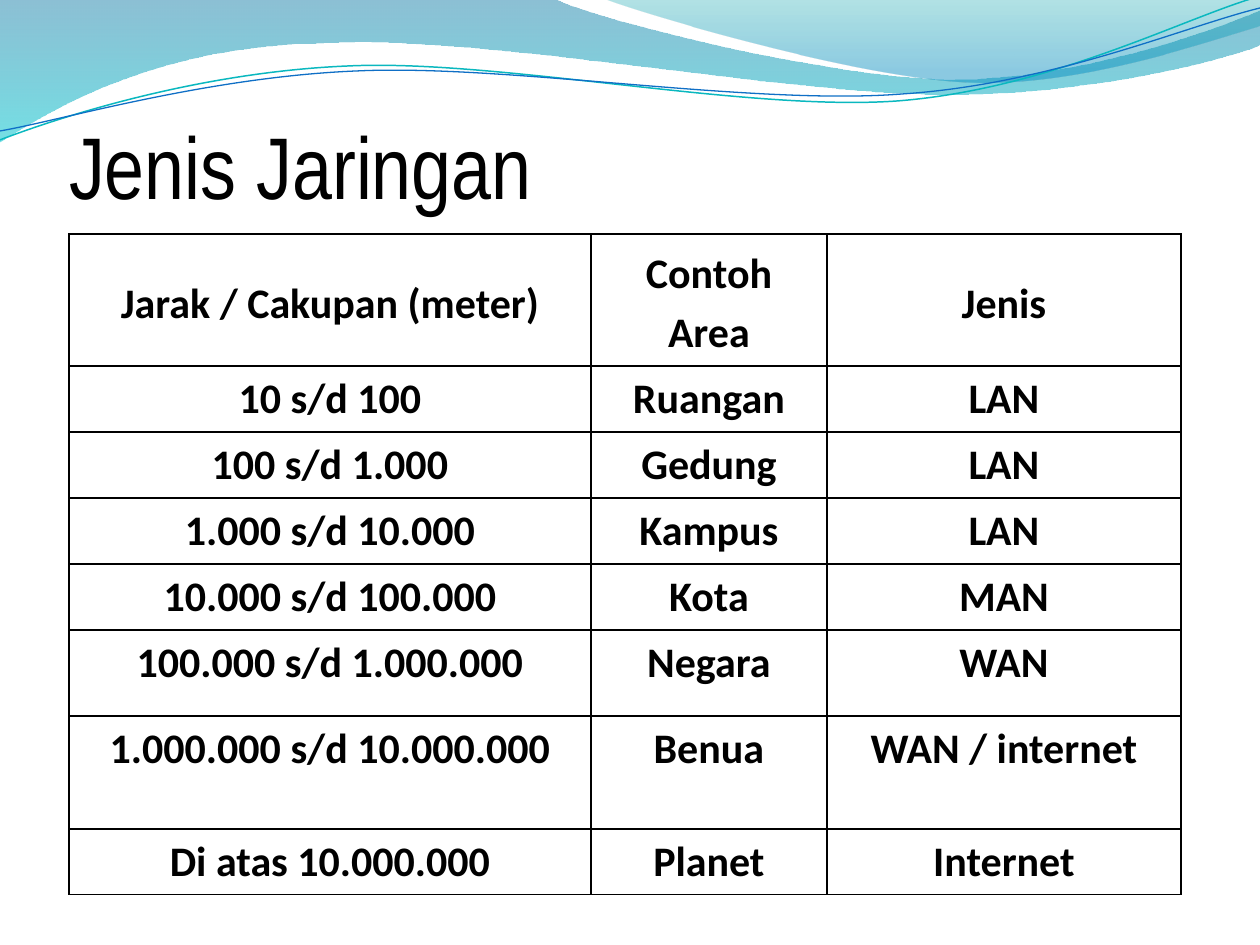
import math
from dataclasses import dataclass

import pptx
import pptx.dml.color
import pptx.enum.text
import pptx.oxml
import pptx.oxml.ns
import pptx.util

SCALE = 914400 / 126
MSO_ANCHOR = pptx.enum.text.MSO_ANCHOR
PP_ALIGN = pptx.enum.text.PP_ALIGN
qn = pptx.oxml.ns.qn
NS = pptx.oxml.ns.nsdecls("a")


@dataclass
class Stop:
    position: float
    color: str
    opacity: int


@dataclass
class Band:
    segments: list[tuple[int, ...]]
    stops: tuple[Stop, Stop]


@dataclass
class Strand:
    segments: list[tuple[int, ...]]
    color: str
    width: float
    pivot: tuple[int, int]


BANDS = [
    Band(
        [(0, 0), (554, -1), (600, 21, 837, 79, 955, 79), (1075, 79, 1207, 33, 1260, 11),
         (1261, 45), (1239, 55, 1096, 96, 940, 94), (784, 94, 481, 35, 324, 43),
         (163, 45, 58, 105, -1, 142), (0, 0)],
        (Stop(0, "0074A1", 45), Stop(1, "00C6CF", 55)),
    ),
    Band(
        [(604, -1), (641, 14, 859, 78, 969, 82), (1079, 87, 1211, 40, 1260, 26), (1260, 0),
         (604, -1)],
        (Stop(0, "00A1A9", 30), Stop(0.8, "008BBF", 45)),
    ),
]
STRANDS = [
    Strand(
        [(0, 140), (60, 117, 199, 72, 349, 66), (498, 59, 747, 112, 898, 101),
         (1050, 89, 1182, 19, 1257, -3)],
        "0AB8BF", 0.85, (629, 72),
    ),
    Strand(
        [(0, 131), (59, 121, 207, 77, 357, 71), (508, 64, 752, 106, 903, 94),
         (1053, 84, 1186, 26, 1260, 8)],
        "0F6FC6", 0.75, (630, 74),
    ),
]
STRAND_ANGLE = -2.7

COLUMNS = [522, 236, 354]
ROW_HEIGHTS = [132, 66, 66, 66, 66, 86, 113, 66]
ROWS = [
    ("Jarak / Cakupan (meter)", "Contoh Area", "Jenis"),
    ("10 s/d 100", "Ruangan", "LAN"),
    ("100 s/d 1.000", "Gedung", "LAN"),
    ("1.000 s/d 10.000", "Kampus", "LAN"),
    ("10.000 s/d 100.000", "Kota", "MAN"),
    ("100.000 s/d 1.000.000", "Negara", "WAN"),
    ("1.000.000 s/d 10.000.000", "Benua", "WAN / internet"),
    ("Di atas 10.000.000", "Planet", "Internet"),
]


def px(n: float) -> pptx.util.Emu:
    return pptx.util.Emu(round(n * SCALE))


def rgb(color: str) -> pptx.dml.color.RGBColor:
    return pptx.dml.color.RGBColor.from_string(color)


def turn(segment: tuple[int, ...], pivot: tuple[int, int], degrees: float) -> tuple[float, ...]:
    cos, sin = math.cos(math.radians(degrees)), math.sin(math.radians(degrees))
    cx, cy = pivot
    turned = []
    for x, y in zip(segment[::2], segment[1::2]):
        turned += [cx + (x - cx) * cos - (y - cy) * sin, cy + (x - cx) * sin + (y - cy) * cos]
    return tuple(turned)


def add_outline(s, segments: list[tuple[float, ...]], close: bool):
    first, *rest = [(px(x), px(y)) for seg in segments for x, y in zip(seg[::2], seg[1::2])]
    builder = s.shapes.build_freeform(*first)
    builder.add_line_segments(rest, close=close)
    sp = builder.convert_to_shape()
    sp.shadow.inherit = False
    steps = iter(list(sp._element.spPr.iter(qn("a:lnTo"))))
    for segment in segments[1:]:
        step = next(steps)
        if len(segment) == 6:
            curve = pptx.oxml.parse_xml(f"<a:cubicBezTo {NS}/>")
            step.addprevious(curve)
            for part in (step, next(steps), next(steps)):
                curve.append(part[0])
                part.getparent().remove(part)
    return sp


def add_band(s, band: Band) -> None:
    sp = add_outline(s, band.segments, True)
    sp.line.fill.background()
    sp.fill.gradient()
    sp.fill.gradient_angle = 270
    for target, stop in zip(sp.fill.gradient_stops, band.stops):
        target.position = stop.position
        target.color.rgb = rgb(stop.color)
    colors = list(sp._element.spPr.iter(qn("a:srgbClr")))
    for color, stop in zip(colors, band.stops):
        color.append(pptx.oxml.parse_xml(f'<a:alpha {NS} val="{stop.opacity * 1000}"/>'))


def add_strand(s, strand: Strand) -> None:
    level = [turn(segment, strand.pivot, -STRAND_ANGLE) for segment in strand.segments]
    sp = add_outline(s, level, False)
    sp.rotation = STRAND_ANGLE
    sp.fill.background()
    sp.line.color.rgb = rgb(strand.color)
    sp.line.width = pptx.util.Pt(strand.width)


def add_text(p, text: str, font: str, size: int, bold: bool) -> None:
    r = p.add_run()
    r.text = text
    r.font.name = font
    r.font.size = pptx.util.Pt(size)
    r.font.bold = bold
    r.font.color.rgb = rgb("000000")


def set_title(s, text: str) -> None:
    sp = s.shapes.title
    sp.left, sp.top, sp.width, sp.height = px(69), px(59), px(1134), px(158)
    tf = sp.text_frame
    tf.word_wrap = True
    tf.auto_size = pptx.enum.text.MSO_AUTO_SIZE.NONE
    tf.vertical_anchor = MSO_ANCHOR.BOTTOM
    tf.margin_left = tf.margin_right = tf.margin_bottom = 0
    tf.margin_top = px(6)
    p = tf.paragraphs[0]
    p.alignment = PP_ALIGN.LEFT
    add_text(p, text, "Arial Narrow", 50, False)


def set_borders(cell, color: str, width: int) -> None:
    tc_pr = cell._tc.get_or_add_tcPr()
    for i, side in enumerate(("lnL", "lnR", "lnT", "lnB")):
        tc_pr.insert(i, pptx.oxml.parse_xml(
            f'<a:{side} {NS} w="{pptx.util.Pt(width)}">'
            f'<a:solidFill><a:srgbClr val="{color}"/></a:solidFill></a:{side}>'))


def fill_cell(cell, text: str, anchor: MSO_ANCHOR) -> None:
    cell.fill.background()
    set_borders(cell, "000000", 1)
    cell.margin_left = cell.margin_right = pptx.util.Pt(5.4)
    cell.margin_top = cell.margin_bottom = 0
    cell.vertical_anchor = anchor
    p = cell.text_frame.paragraphs[0]
    p.alignment = PP_ALIGN.CENTER
    p.line_spacing = 1.15
    add_text(p, text, "Calibri", 24, True)


def add_network_table(s) -> None:
    table = s.shapes.add_table(len(ROWS), len(COLUMNS), px(69), px(234),
                               px(sum(COLUMNS)), px(sum(ROW_HEIGHTS))).table
    table.first_row = table.horz_banding = False
    for column, width in zip(table.columns, COLUMNS):
        column.width = px(width)
    for i, (height, texts) in enumerate(zip(ROW_HEIGHTS, ROWS)):
        table.rows[i].height = px(height)
        anchor = MSO_ANCHOR.TOP if i else MSO_ANCHOR.MIDDLE
        for j, text in enumerate(texts):
            fill_cell(table.cell(i, j), text, anchor)


def main() -> None:
    prs = pptx.Presentation()
    prs.slide_width, prs.slide_height = px(1260), px(945)
    s = prs.slides.add_slide(prs.slide_layouts[5])
    for band in BANDS:
        add_band(s, band)
    for strand in STRANDS:
        add_strand(s, strand)
    set_title(s, "Jenis Jaringan")
    add_network_table(s)
    prs.save("out.pptx")


if __name__ == "__main__":
    main()
